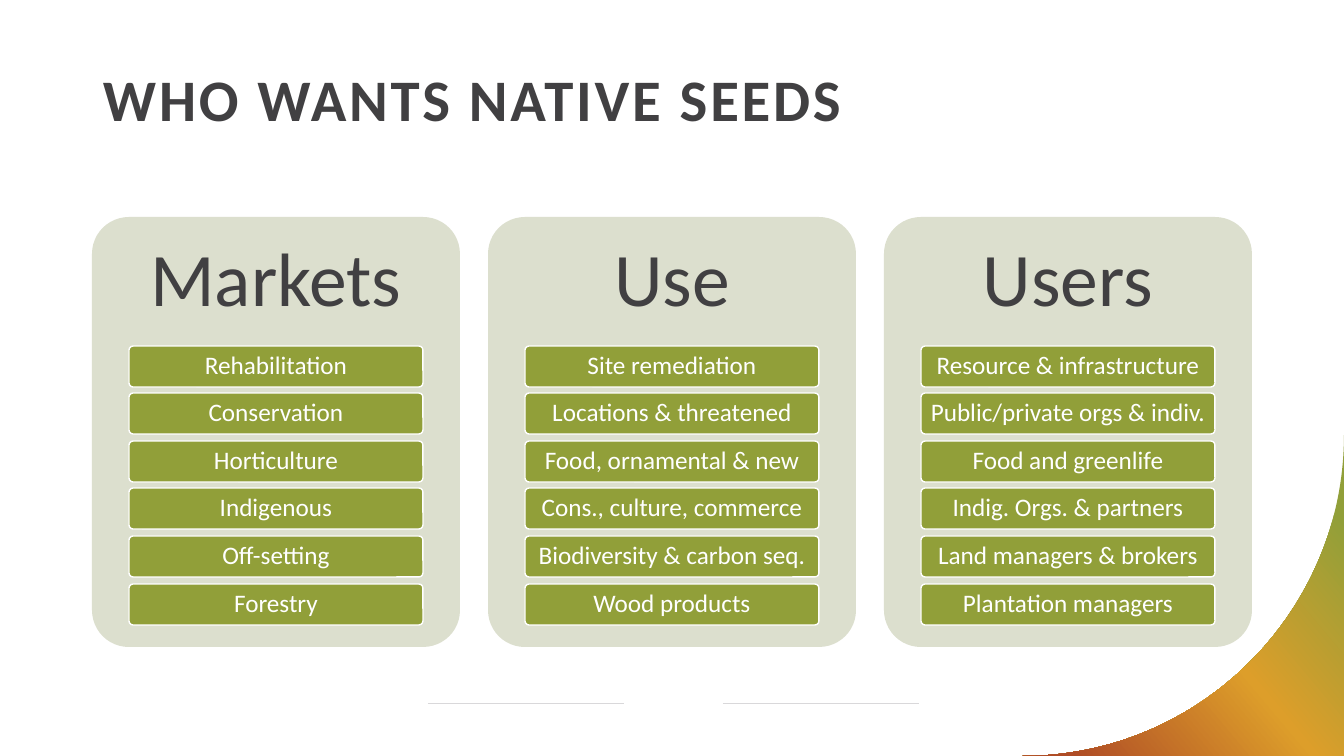
"""Build the slide on who wants native seeds: markets, uses and users in three cards."""
import copy

import lxml.etree
import pptx
import pptx.dml.color
import pptx.enum.dml
import pptx.enum.shapes
import pptx.enum.text
import pptx.oxml.ns
import pptx.util

PX = 914400 / 100.8
RGBColor = pptx.dml.color.RGBColor
CHARCOAL = RGBColor(0x41, 0x40, 0x42)
SAGE = RGBColor(0xDC, 0xDF, 0xCE)
GREEN = RGBColor(0x91, 0x9F, 0x39)
AMBER = RGBColor(0xDD, 0x9E, 0x2A)
RUST = RGBColor(0xAF, 0x4C, 0x26)
RULE_GREY = RGBColor(0xD9, 0xD8, 0xDA)
WHITE = RGBColor(0xFF, 0xFF, 0xFF)

ALIGN = pptx.enum.text.PP_ALIGN
ANCHOR = pptx.enum.text.MSO_ANCHOR
ROUNDED = pptx.enum.shapes.MSO_SHAPE.ROUNDED_RECTANGLE
qn = pptx.oxml.ns.qn

COLUMNS = {
    "Markets": ["Rehabilitation", "Conservation", "Horticulture",
                "Indigenous", "Off-setting", "Forestry"],
    "Use": ["Site remediation", "Locations & threatened", "Food, ornamental & new",
            "Cons., culture, commerce", "Biodiversity & carbon seq.", "Wood products"],
    "Users": ["Resource & infrastructure", "Public/private orgs & indiv.", "Food and greenlife",
              "Indig. Orgs. & partners", "Land managers & brokers", "Plantation managers"],
}


def px(*lengths):
    """Turn pixel lengths into EMU."""
    return [pptx.util.Emu(round(length * PX)) for length in lengths]


def write(shape, text, size, color, align, anchor, inset_x, inset_y):
    """Fill a shape with one formatted paragraph and return that paragraph."""
    frame = shape.text_frame
    frame.word_wrap = True
    frame.auto_size = pptx.enum.text.MSO_AUTO_SIZE.NONE
    frame.vertical_anchor = anchor
    frame.margin_left, frame.margin_right = px(inset_x, inset_x)
    frame.margin_top, frame.margin_bottom = px(inset_y, inset_y)
    paragraph = frame.paragraphs[0]
    paragraph.text = text
    paragraph.alignment = align
    paragraph.line_spacing = 0.9
    paragraph.font.name = "Calibri"
    paragraph.font.size = pptx.util.Pt(size)
    paragraph.font.color.rgb = color
    return paragraph


deck = pptx.Presentation()
deck.slide_width, deck.slide_height = px(1344, 756)
slide = deck.slides.add_slide(deck.slide_layouts[5])
shapes = slide.shapes

title = shapes.title
title.left, title.top, title.width, title.height = px(93, 66, 1159, 133)
heading = write(title, "WHO WANTS NATIVE SEEDS", 42, CHARCOAL, ALIGN.LEFT, ANCHOR.TOP, 10, 5)
heading.font.bold = True
heading.runs[0].font._element.set("spc", "200")

for rule_left in (428, 723):
    footer_rule = shapes.add_connector(
        pptx.enum.shapes.MSO_CONNECTOR.STRAIGHT, *px(rule_left, 703, rule_left + 196, 703))
    footer_rule.line.color.rgb = RULE_GREY
    footer_rule.line.width = pptx.util.Pt(0.5)
    lxml.etree.SubElement(footer_rule._element.spPr, qn("a:effectLst"))

corner_outline = shapes.build_freeform(1344, 435, scale=PX)
corner_outline.add_line_segments([(1023, 756), (1017, 756), (1344, 756)], close=True)
corner = corner_outline.convert_to_shape()
corner.shadow.inherit = False
corner.line.fill.background()

arc = corner._element.find(".//" + qn("a:lnTo"))
arc.tag = qn("a:cubicBezTo")
for position, (x, y) in enumerate([(327, 177), (183, 321)]):
    control = lxml.etree.Element(qn("a:pt"), x=str(x), y=str(y))
    arc.insert(position, control)

corner.fill.gradient()
corner.fill.gradient_angle = 220
stop_list = corner._element.find(".//" + qn("a:gsLst"))
stop_list.append(copy.deepcopy(stop_list[-1]))
for stop, (position, color) in zip(corner.fill.gradient_stops,
                                   [(0.12, GREEN), (0.5, AMBER), (0.91, RUST)]):
    stop.position = position
    stop.color.rgb = color

for column, (group, entries) in enumerate(COLUMNS.items()):
    card_left = 92 + 396 * column
    card = shapes.add_shape(ROUNDED, *px(card_left, 217, 368, 430))
    card.adjustments[0] = 0.1
    card.shadow.inherit = False
    card.fill.solid()
    card.fill.fore_color.rgb = SAGE
    card.line.fill.background()

    group_name = shapes.add_textbox(*px(card_left, 217, 368, 129))
    write(group_name, group, 54, CHARCOAL, ALIGN.CENTER, ANCHOR.MIDDLE, 23, 23)

    for row, entry in enumerate(entries):
        pill = shapes.add_shape(ROUNDED, *px(card_left + 37, 346 + 238 * row // 5, 294, 41))
        pill.adjustments[0] = 0.1
        pill.shadow.inherit = False
        pill.fill.solid()
        pill.fill.fore_color.rgb = GREEN
        pill.line.color.rgb = WHITE
        pill.line.width = pptx.util.Pt(1)
        write(pill, entry, 18, WHITE, ALIGN.CENTER, ANCHOR.MIDDLE, 5, 4)

deck.save("out.pptx")
